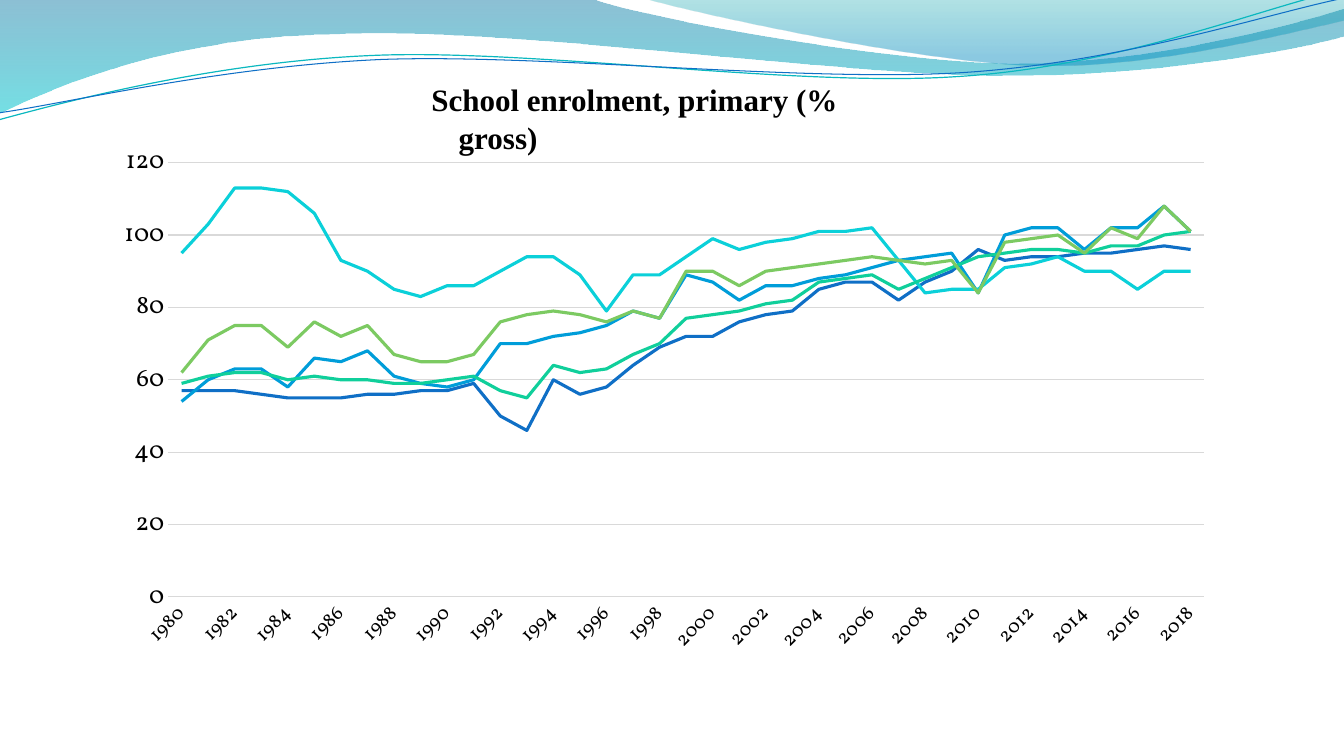
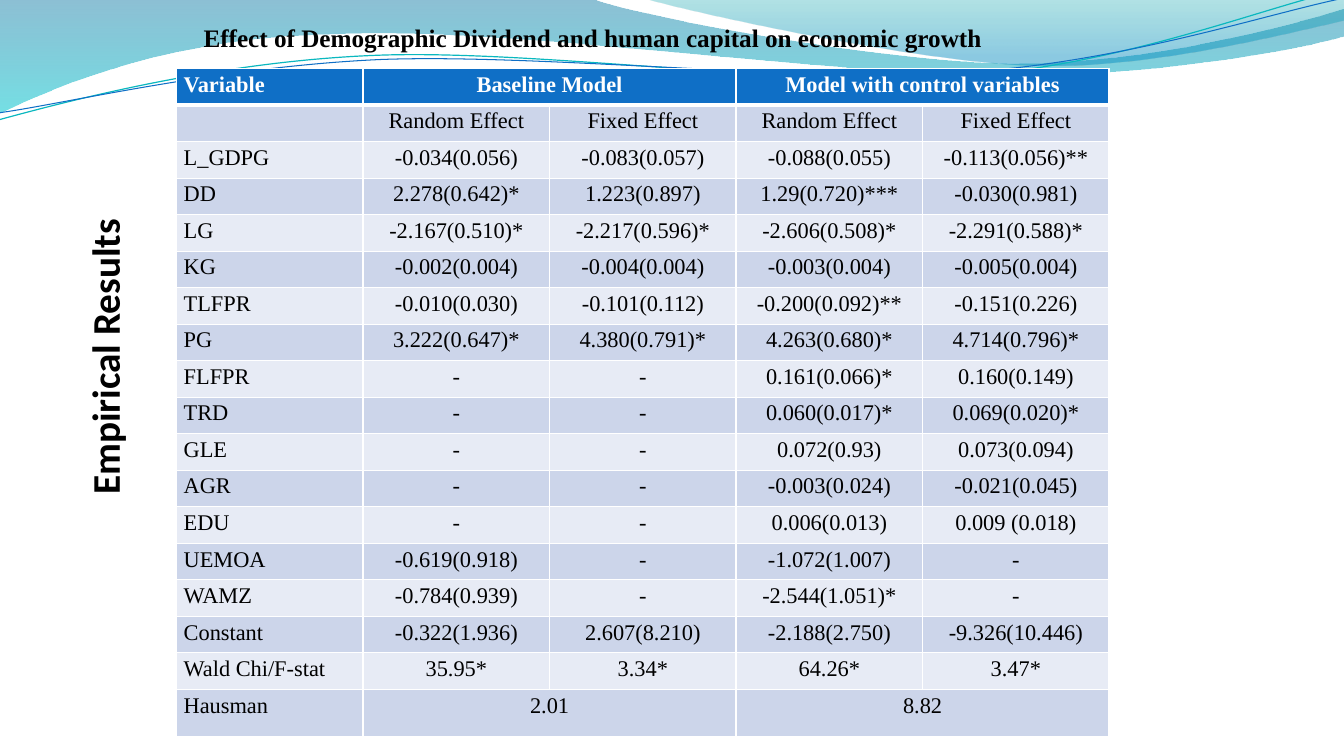
"""Build two slides on school enrolment and growth regressions."""
from lxml import etree
from pptx import Presentation
from pptx import util as u
from pptx.chart.data import CategoryChartData
from pptx.dml.color import RGBColor
from pptx.enum import chart as ch
from pptx.enum import text
from pptx.oxml.ns import qn

SERIF, SANS, CHART_FONT = "Times New Roman", "Calibri", "Vollkorn"
BLACK, WHITE, BLUE, GRID = "000000", "FFFFFF", "0F6FC6", "D9D9D9"
BANDS = ("CCD5EA", "E7EBF5")

BANNER = [
    {"path": [(0, 0), (14.91, -0.03),
              [(16.1, 0.43), (22.48, 1.6), (25.68, 1.6)],
              [(28.91, 1.6), (32.46, 0.66), (33.86, 0.23)],
              (33.91, 0.91),
              [(33.3, 1.12), (29.46, 1.93), (25.25, 1.91)],
              [(21.06, 1.91), (12.93, 0.71), (8.71, 0.86)],
              [(4.37, 0.91), (1.55, 2.11), (-0.03, 2.87)]],
     "stops": [(0, "0074A1", 45), (1, "00C6CF", 55)]},
    {"path": [(16.23, -0.03),
              [(17.25, 0.28), (23.09, 1.57), (26.04, 1.65)],
              [(28.98, 1.75), (32.56, 0.81), (33.86, 0.53)],
              (33.86, 0)],
     "stops": [(0, "00A1A9", 30), (0.8, "008BBF", 45)]},
    {"path": [(-0.03, 3.02),
              [(1.63, 2.57), (5.36, 1.57), (9.37, 1.4)],
              [(13.39, 1.22), (20.07, 2.21), (24.13, 1.93)],
              [(28.19, 1.68), (31.8, 0.2), (33.81, -0.25)]],
     "line": ("0AB8BF", 0.85)},
    {"path": [(0, 2.84),
              [(1.6, 2.62), (5.54, 1.68), (9.6, 1.5)],
              [(13.64, 1.35), (20.22, 2.08), (24.26, 1.83)],
              [(28.32, 1.57), (31.88, 0.36), (33.88, -0.05)]],
     "line": (BLUE, 0.75)},
]

ENROLMENT_TITLE = "School enrolment, primary (% gross)"
YEARS = [str(year) for year in range(1980, 2019)]
ENROLMENT = [
    (BLUE,
     (57, 57, 57, 56, 55, 55, 55, 56, 56, 57, 57, 59, 50, 46, 60, 56, 58, 64, 69, 72,
      72, 76, 78, 79, 85, 87, 87, 82, 87, 90, 96, 93, 94, 94, 95, 95, 96, 97, 96)),
    ("009DD9",
     (54, 60, 63, 63, 58, 66, 65, 68, 61, 59, 58, 60, 70, 70, 72, 73, 75, 79, 77, 89,
      87, 82, 86, 86, 88, 89, 91, 93, 94, 95, 84, 100, 102, 102, 96, 102, 102, 108, 101)),
    ("0BD0D9",
     (95, 103, 113, 113, 112, 106, 93, 90, 85, 83, 86, 86, 90, 94, 94, 89, 79, 89, 89, 94,
      99, 96, 98, 99, 101, 101, 102, 93, 84, 85, 85, 91, 92, 94, 90, 90, 85, 90, 90)),
    ("10CF9B",
     (59, 61, 62, 62, 60, 61, 60, 60, 59, 59, 60, 61, 57, 55, 64, 62, 63, 67, 70, 77,
      78, 79, 81, 82, 87, 88, 89, 85, 88, 91, 94, 95, 96, 96, 95, 97, 97, 100, 101)),
    ("7CCA62",
     (62, 71, 75, 75, 69, 76, 72, 75, 67, 65, 65, 67, 76, 78, 79, 78, 76, 79, 77, 90,
      90, 86, 90, 91, 92, 93, 94, 93, 92, 93, 84, 98, 99, 100, 95, 102, 99, 108, 101)),
]

RESULTS_TITLE = "Effect of Demographic Dividend and human capital on economic growth"
SIDE_TITLE = "Empirical Results"
RESULTS = [
    ("Variable", "Baseline Model", None, "Model with control variables", None),
    ("", "Random Effect", "Fixed Effect", "Random Effect", "Fixed Effect"),
    ("L_GDPG", "-0.034(0.056)", "-0.083(0.057)", "-0.088(0.055)", "-0.113(0.056)**"),
    ("DD", "2.278(0.642)*", "1.223(0.897)", "1.29(0.720)***", "-0.030(0.981)"),
    ("LG", "-2.167(0.510)*", "-2.217(0.596)*", "-2.606(0.508)*", "-2.291(0.588)*"),
    ("KG", "-0.002(0.004)", "-0.004(0.004)", "-0.003(0.004)", "-0.005(0.004)"),
    ("TLFPR", "-0.010(0.030)", "-0.101(0.112)", "-0.200(0.092)**", "-0.151(0.226)"),
    ("PG", "3.222(0.647)*", "4.380(0.791)*", "4.263(0.680)*", "4.714(0.796)*"),
    ("FLFPR", "-", "-", "0.161(0.066)*", "0.160(0.149)"),
    ("TRD", "-", "-", "0.060(0.017)*", "0.069(0.020)*"),
    ("GLE", "-", "-", "0.072(0.93)", "0.073(0.094)"),
    ("AGR", "-", "-", "-0.003(0.024)", "-0.021(0.045)"),
    ("EDU", "-", "-", "0.006(0.013)", "0.009 (0.018)"),
    ("UEMOA", "-0.619(0.918)", "-", "-1.072(1.007)", "-"),
    ("WAMZ", "-0.784(0.939)", "-", "-2.544(1.051)*", "-"),
    ("Constant", "-0.322(1.936)", "2.607(8.210)", "-2.188(2.750)", "-9.326(10.446)"),
    ("Wald Chi/F-stat", "35.95*", "3.34*", "64.26*", "3.47*"),
    ("Hausman", "2.01", None, "8.82", None),
]


def rgb(value):
    return RGBColor.from_string(value)


def cm(*values):
    return [u.Cm(v) for v in values]


def style(font, name, size, color=BLACK, bold=False):
    font.name, font.size, font.bold = name, u.Pt(size), bold
    font.color.rgb = rgb(color)


def add_wave(s, path, stops=None, line=None):
    start, *segments = path
    points = [pt for seg in segments for pt in (seg if isinstance(seg, list) else [seg])]
    builder = s.shapes.build_freeform(*cm(*start))
    builder.add_line_segments([cm(*pt) for pt in points], close=bool(stops))
    sp = builder.convert_to_shape()
    sp.shadow.inherit = False

    nodes = iter(sp.element.findall(".//" + qn("a:lnTo")))
    for seg in segments:
        node = next(nodes)
        if isinstance(seg, list):
            curve = etree.Element(qn("a:cubicBezTo"))
            node.addprevious(curve)
            for part in (node, next(nodes), next(nodes)):
                curve.append(part[0])
                part.getparent().remove(part)

    if stops:
        sp.line.fill.background()
        sp.fill.gradient()
        sp.fill.gradient_angle = 270
        for stop, (position, color, _) in zip(sp.fill.gradient_stops, stops):
            stop.position, stop.color.rgb = position, rgb(color)
        colors = sp.element.findall(".//" + qn("a:gs") + "/" + qn("a:srgbClr"))
        for node, (_, _, opacity) in zip(colors, stops):
            etree.SubElement(node, qn("a:alpha")).set("val", str(opacity * 1000))
    else:
        sp.fill.background()
        sp.line.color.rgb, sp.line.width = rgb(line[0]), u.Pt(line[1])
    return sp


def add_title(s, box, words, size, font=SERIF):
    sp = s.shapes.add_textbox(*cm(*box))
    tf = sp.text_frame
    tf.word_wrap = True
    tf.text = words
    style(tf.paragraphs[0].runs[0].font, font, size, bold=True)
    return sp


def add_enrolment_chart(s):
    data = CategoryChartData()
    data.categories = YEARS
    for _, values in ENROLMENT:
        data.add_series("", values)
    chart = s.shapes.add_chart(ch.XL_CHART_TYPE.LINE, *cm(2.54, 3.38, 28.37, 14.4), data).chart
    chart.has_legend = chart.has_title = False
    style(chart.font, CHART_FONT, 10)
    chart.plots[0].vary_by_categories = False
    for series, (color, _) in zip(chart.plots[0].series, ENROLMENT):
        series.smooth = False
        series.marker.style = ch.XL_MARKER_STYLE.NONE
        series.format.line.color.rgb = rgb(color)
        series.format.line.width = u.Pt(2.25)

    years, percent = chart.category_axis, chart.value_axis
    for axis, size in ((years, 14), (percent, 18)):
        axis.major_tick_mark = axis.minor_tick_mark = ch.XL_TICK_MARK.NONE
        style(axis.tick_labels.font, CHART_FONT, size)
    percent.minimum_scale, percent.maximum_scale, percent.major_unit = 0, 120, 20
    percent.format.line.fill.background()
    for line in (years.format.line, percent.major_gridlines.format.line):
        line.color.rgb, line.width = rgb(GRID), u.Pt(0.75)

    root = chart.element
    root.find(".//" + qn("c:catAx") + "//" + qn("a:bodyPr")).set("rot", "-2700000")
    skip = etree.Element(qn("c:tickLblSkip"))
    skip.set("val", "2")
    root.find(".//" + qn("c:catAx") + "/" + qn("c:noMultiLvlLbl")).addprevious(skip)
    area = root.find(".//" + qn("c:plotArea"))
    for old in area.findall(qn("c:layout")):
        area.remove(old)
    layout = etree.Element(qn("c:layout"))
    area.insert(0, layout)
    manual = etree.SubElement(layout, qn("c:manualLayout"))
    for tag, value in (("layoutTarget", "inner"), ("xMode", "edge"), ("yMode", "edge"),
                       ("x", 0.06), ("y", 0.05), ("w", 0.92), ("h", 0.76)):
        etree.SubElement(manual, qn("c:" + tag)).set("val", str(value))


def set_borders(cell, bottom):
    tc_pr = cell._tc.get_or_add_tcPr()
    for i, (side, width) in enumerate((("L", 1), ("R", 1), ("T", 1), ("B", bottom))):
        ln = etree.Element(qn("a:ln" + side))
        ln.set("w", str(u.Pt(width)))
        fill = etree.SubElement(ln, qn("a:solidFill"))
        etree.SubElement(fill, qn("a:srgbClr")).set("val", WHITE)
        tc_pr.insert(i, ln)


def add_results_table(s):
    rows, cols = len(RESULTS), len(RESULTS[0])
    heights = [0.92] * (rows - 1) + [1.2]
    table = s.shapes.add_table(rows, cols, *cm(4.45, 1.73, 4.7 * cols, sum(heights))).table
    table.horz_banding = False
    for column in table.columns:
        column.width = u.Cm(4.7)
    for i, values in enumerate(RESULTS):
        header = i == 0
        table.rows[i].height = u.Cm(heights[i])
        for j, value in enumerate(values):
            cell = table.cell(i, j)
            cell.fill.solid()
            cell.fill.fore_color.rgb = rgb(BLUE if header else BANDS[(i - 1) % 2])
            set_borders(cell, 3 if header else 1)
            cell.margin_left = cell.margin_right = u.Cm(0.18)
            cell.margin_top = cell.margin_bottom = 0
            if value is None:
                table.cell(i, j - 1).merge(cell)
                continue
            p = cell.text_frame.paragraphs[0]
            p.text = value
            p.alignment = text.PP_ALIGN.CENTER if j else text.PP_ALIGN.LEFT
            p.line_spacing, p.space_after = 1.15, u.Pt(8)
            for r in p.runs:
                style(r.font, SERIF, 16, WHITE if header else BLACK, header)


def main():
    prs = Presentation()
    prs.slide_width, prs.slide_height = cm(33.87, 19.05)
    blank = prs.slide_layouts[6]

    s = prs.slides.add_slide(blank)
    for wave in BANNER:
        blank.shapes.element.append(add_wave(s, **wave).element)
    title = add_title(s, (9.53, 1.91, 13.97, 1.27), ENROLMENT_TITLE, 22.2)
    p_pr = title.text_frame.paragraphs[0]._p.get_or_add_pPr()
    p_pr.set("marL", str(u.Cm(1.78)))
    p_pr.set("indent", str(u.Cm(-0.69)))
    add_enrolment_chart(s)

    s = prs.slides.add_slide(blank)
    add_title(s, (4.88, 0.43, 20.75, 1.09), RESULTS_TITLE, 18)
    add_results_table(s)
    side = add_title(s, (1.91, 4.45, 1.7, 9.09), SIDE_TITLE, 28, SANS)
    side.text_frame.paragraphs[0].alignment = text.PP_ALIGN.CENTER
    side.element.find(".//" + qn("a:bodyPr")).set("vert", "vert270")

    prs.save("out.pptx")


if __name__ == "__main__":
    main()
